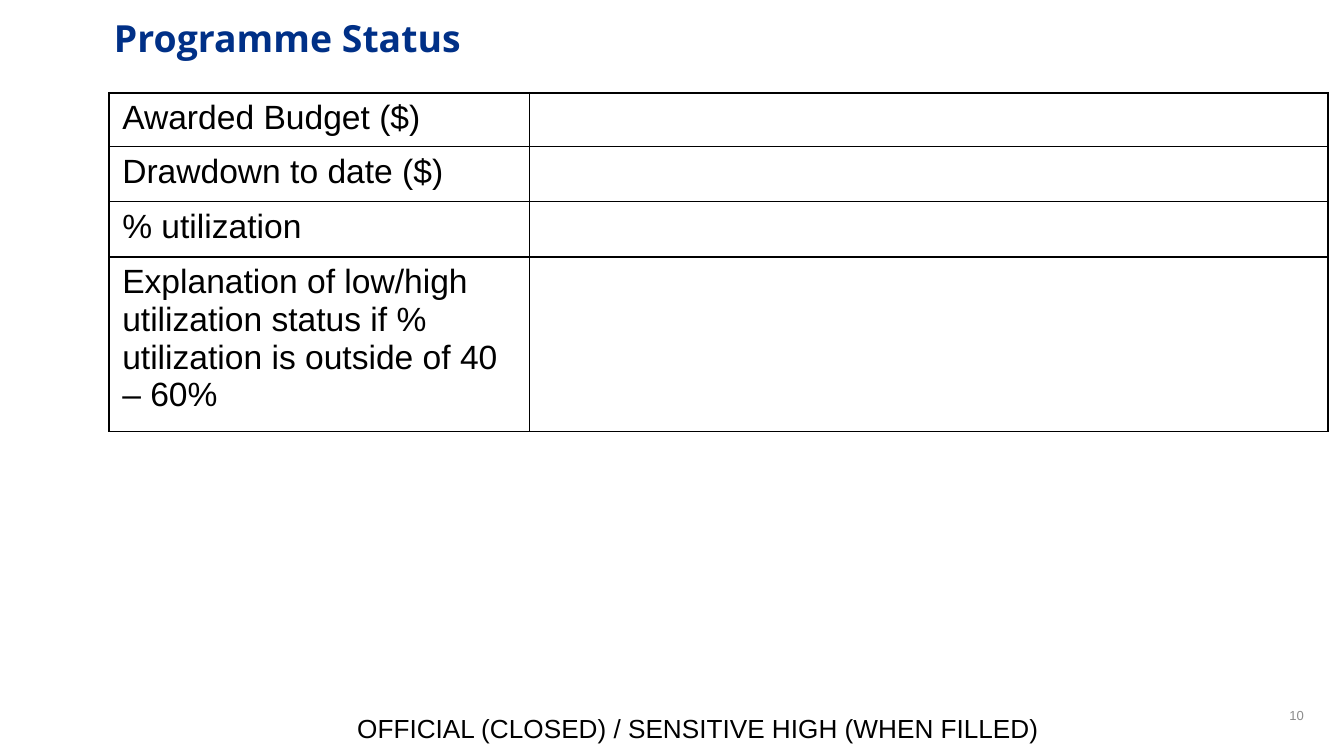
from dataclasses import dataclass

import lxml.etree
import pptx
import pptx.dml.color
import pptx.enum.text
import pptx.oxml.ns
import pptx.util

ALIGN = pptx.enum.text.PP_ALIGN
ANCHOR = pptx.enum.text.MSO_ANCHOR


@dataclass(frozen=True)
class Theme:
    navy: str = "003087"
    black: str = "000000"
    grey: str = "8C8C8C"
    heading_font: str = "Open Sans"
    body_font: str = "Arial"
    title_size: int = 20
    table_size: int = 18
    marking_size: int = 14
    number_size: int = 7
    rule_width: int = 1


THEME = Theme()
WIDTH = pptx.util.Inches(10)
HEIGHT = WIDTH * 9 // 16
GRID_COLUMNS = 100
UNIT = WIDTH // GRID_COLUMNS

STATUS_ROWS = [
    ("Awarded Budget ($)", ""),
    ("Drawdown to date ($)", ""),
    ("% utilization", ""),
    ("Explanation of low/high utilization status if % utilization is outside of 40 – 60%", ""),
]
COLUMN_UNITS = (31.3, 59.4)
ROW_UNITS = (3.7, 4.1, 4.1, 12.2)


def grid(*units):
    return tuple(round(unit * UNIT) for unit in units)


def inner_box(box, left, top, width, height):
    dx, dy, inner_width, inner_height = grid(left, top, width, height)
    return box[0] + dx, box[1] + dy, inner_width, inner_height


def write_text(frame, text, *, size, color=THEME.black, font=THEME.body_font,
               bold=False, align=ALIGN.LEFT, anchor=ANCHOR.TOP):
    frame.word_wrap = True
    frame.vertical_anchor = anchor
    paragraph = frame.paragraphs[0]
    paragraph.alignment = align
    run = paragraph.add_run()
    run.text = text
    run.font.size = pptx.util.Pt(size)
    run.font.name = font
    run.font.bold = bold
    run.font.color.rgb = pptx.dml.color.RGBColor.from_string(color)


def add_label(slide, box, text, **style):
    write_text(slide.shapes.add_textbox(*box).text_frame, text, **style)


def add_title(slide, box):
    add_label(slide, box, "Programme Status", size=THEME.title_size,
              color=THEME.navy, font=THEME.heading_font, bold=True)


def rule_cell(cell):
    properties = cell._tc.get_or_add_tcPr()
    qn = pptx.oxml.ns.qn
    for position, side in enumerate(("lnL", "lnR", "lnT", "lnB")):
        line = lxml.etree.Element(qn(f"a:{side}"), w=str(pptx.util.Pt(THEME.rule_width)))
        fill = lxml.etree.SubElement(line, qn("a:solidFill"))
        lxml.etree.SubElement(fill, qn("a:srgbClr"), val=THEME.black)
        properties.insert(position, line)


def add_status_table(slide, box):
    status = slide.shapes.add_table(len(STATUS_ROWS), len(COLUMN_UNITS), *box).table
    status.first_row = status.horz_banding = False
    for column, width in zip(status.columns, grid(*COLUMN_UNITS)):
        column.width = width
    for row, height, entries in zip(status.rows, grid(*ROW_UNITS), STATUS_ROWS):
        row.height = height
        for cell, entry in zip(row.cells, entries):
            cell.fill.background()
            rule_cell(cell)
            if entry:
                write_text(cell.text_frame, entry, size=THEME.table_size)
            else:
                cell.text_frame.paragraphs[0].font.size = pptx.util.Pt(THEME.table_size)


def add_footer(slide, box):
    add_label(slide, inner_box(box, 49.1, 0, 23.3, 3), "10", size=THEME.number_size,
              color=THEME.grey, align=ALIGN.RIGHT, anchor=ANCHOR.MIDDLE)
    add_label(slide, inner_box(box, 0, 0.8, 54.3, 3.4),
              "OFFICIAL (CLOSED) / SENSITIVE HIGH (WHEN FILLED)", size=THEME.marking_size)


def main():
    deck = pptx.Presentation()
    deck.slide_width, deck.slide_height = WIDTH, HEIGHT
    slide = deck.slides.add_slide(deck.slide_layouts[6])
    add_footer(slide, grid(25.6, 51.7, 72.4, 4.2))
    add_title(slide, grid(7.5, 0.6, 86.6, 7.9))
    add_status_table(slide, grid(8.1, 6.9, sum(COLUMN_UNITS), sum(ROW_UNITS)))
    deck.save("out.pptx")


if __name__ == "__main__":
    main()
